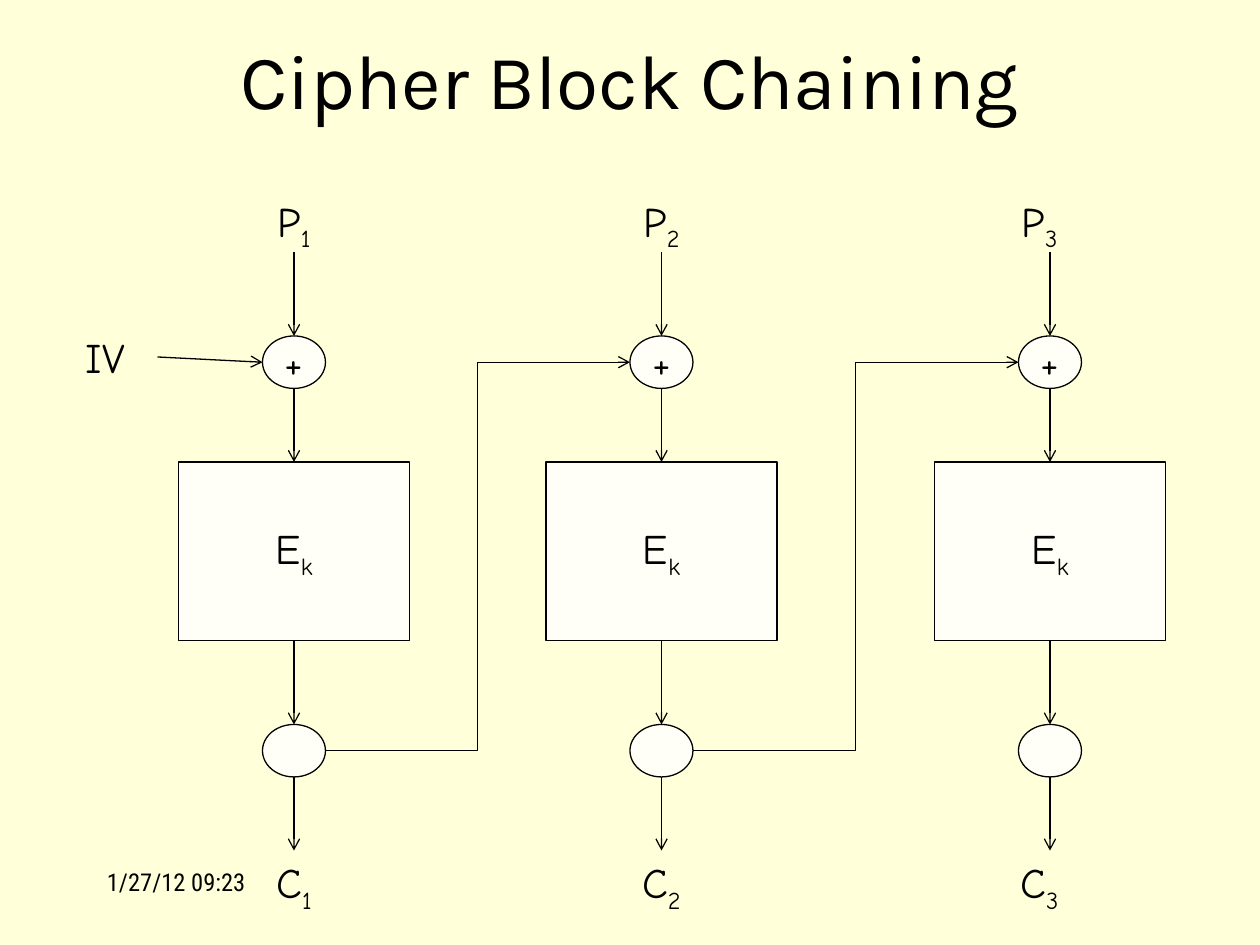
from pptx import Presentation
from pptx import util as u
from pptx.dml.color import RGBColor
from pptx.enum import shapes, text
from pptx.oxml.ns import qn
from lxml import etree

PX = u.Inches(1) // 96
INK, PAPER, PANEL = "000000", "FFFFD9", "FFFFF7"
BODY_FONT = "Comic Neue"
CENTER, LEFT = text.PP_ALIGN.CENTER, text.PP_ALIGN.LEFT

STAGE_CENTERS = [224, 504, 800]
LABEL_CENTERS = [224, 504, 792]
XOR_Y, OUTPUT_Y = 276, 572
NODE_W, NODE_H = 48, 40
CIPHER_W, CIPHER_TOP, CIPHER_H = 176, 352, 136
PLAIN_TOP, CIPHERTEXT_TOP = 144, 648
LABEL_W, LABEL_H = 64, 48


def px(*lengths):
    return [length * PX for length in lengths]


def color(hex_value):
    return RGBColor.from_string(hex_value)


def write(frame, main, sub="", size=24, font=BODY_FONT, align=CENTER):
    """Write one paragraph, with an optional subscript run."""
    paragraph = frame.paragraphs[0]
    paragraph.alignment = align
    for part, baseline in ((main, None), (sub, "-25000")):
        if not part:
            continue
        run = paragraph.add_run()
        run.text = part
        run.font.size = u.Pt(size)
        run.font.name = font
        run.font.color.rgb = color(INK)
        if baseline:
            run.font._element.set("baseline", baseline)


def add_label(slide, box, main, sub="", **style):
    frame = slide.shapes.add_textbox(*px(*box)).text_frame
    frame.word_wrap = True
    write(frame, main, sub, **style)


def add_block(slide, preset, box, main="", sub=""):
    block = slide.shapes.add_shape(preset, *px(*box))
    block.shadow.inherit = False
    block.fill.solid()
    block.fill.fore_color.rgb = color(PANEL)
    block.line.color.rgb = color(INK)
    block.line.width = u.Pt(0.75)
    block.text_frame.vertical_anchor = text.MSO_ANCHOR.MIDDLE
    write(block.text_frame, main, sub)


def add_node(slide, center, middle, symbol=""):
    box = (center - NODE_W // 2, middle - NODE_H // 2, NODE_W, NODE_H)
    add_block(slide, shapes.MSO_SHAPE.OVAL, box, symbol)


def add_arrow(slide, start, end, route=shapes.MSO_CONNECTOR.STRAIGHT):
    arrow = slide.shapes.add_connector(route, *px(*start, *end))
    arrow.line.color.rgb = color(INK)
    arrow.line.width = u.Pt(0.75)
    etree.SubElement(arrow.line._get_or_add_ln(), qn("a:tailEnd"), type="arrow")
    etree.SubElement(arrow._element.spPr, qn("a:effectLst"))


def add_stage(slide, number, center, label_center):
    """Draw one column, from plaintext down to ciphertext."""
    cipher_box = (center - CIPHER_W // 2, CIPHER_TOP, CIPHER_W, CIPHER_H)
    add_block(slide, shapes.MSO_SHAPE.RECTANGLE, cipher_box, "E", "k")
    add_node(slide, center, XOR_Y, "+")
    add_node(slide, center, OUTPUT_Y)

    half = NODE_H // 2
    flow = [
        (PLAIN_TOP + LABEL_H, XOR_Y - half),
        (XOR_Y + half, CIPHER_TOP),
        (CIPHER_TOP + CIPHER_H, OUTPUT_Y - half),
        (OUTPUT_Y + half, CIPHERTEXT_TOP),
    ]
    for top, bottom in flow:
        add_arrow(slide, (center, top), (center, bottom))

    for letter, top in (("P", PLAIN_TOP), ("C", CIPHERTEXT_TOP)):
        label_box = (label_center - LABEL_W // 2, top, LABEL_W, LABEL_H)
        add_label(slide, label_box, letter, str(number))


def add_title(slide, wording):
    title = slide.shapes.title
    title.left, title.top, title.width, title.height = px(72, 0, 816, 120)
    frame = title.text_frame
    frame.auto_size = text.MSO_AUTO_SIZE.NONE
    frame.vertical_anchor = text.MSO_ANCHOR.MIDDLE
    write(frame, wording, size=44, font="Karla")


def main():
    prs = Presentation()
    prs.slide_width, prs.slide_height = px(960, 720)
    slide = prs.slides.add_slide(prs.slide_layouts[5])
    slide.background.fill.solid()
    slide.background.fill.fore_color.rgb = color(PAPER)

    add_title(slide, "Cipher Block Chaining")
    add_label(slide, (72, 656, 200, 48), "1/27/12 09:23",
              size=14, font="Roboto Condensed", align=LEFT)

    for number, centers in enumerate(zip(STAGE_CENTERS, LABEL_CENTERS), 1):
        add_stage(slide, number, *centers)

    half = NODE_W // 2
    add_label(slide, (56, 248, LABEL_W, LABEL_H), "IV", align=LEFT)
    add_arrow(slide, (120, 272), (STAGE_CENTERS[0] - half, XOR_Y))
    for source, target in zip(STAGE_CENTERS, STAGE_CENTERS[1:]):
        add_arrow(slide, (source + half, OUTPUT_Y), (target - half, XOR_Y),
                  shapes.MSO_CONNECTOR.ELBOW)

    prs.save("out.pptx")


if __name__ == "__main__":
    main()
